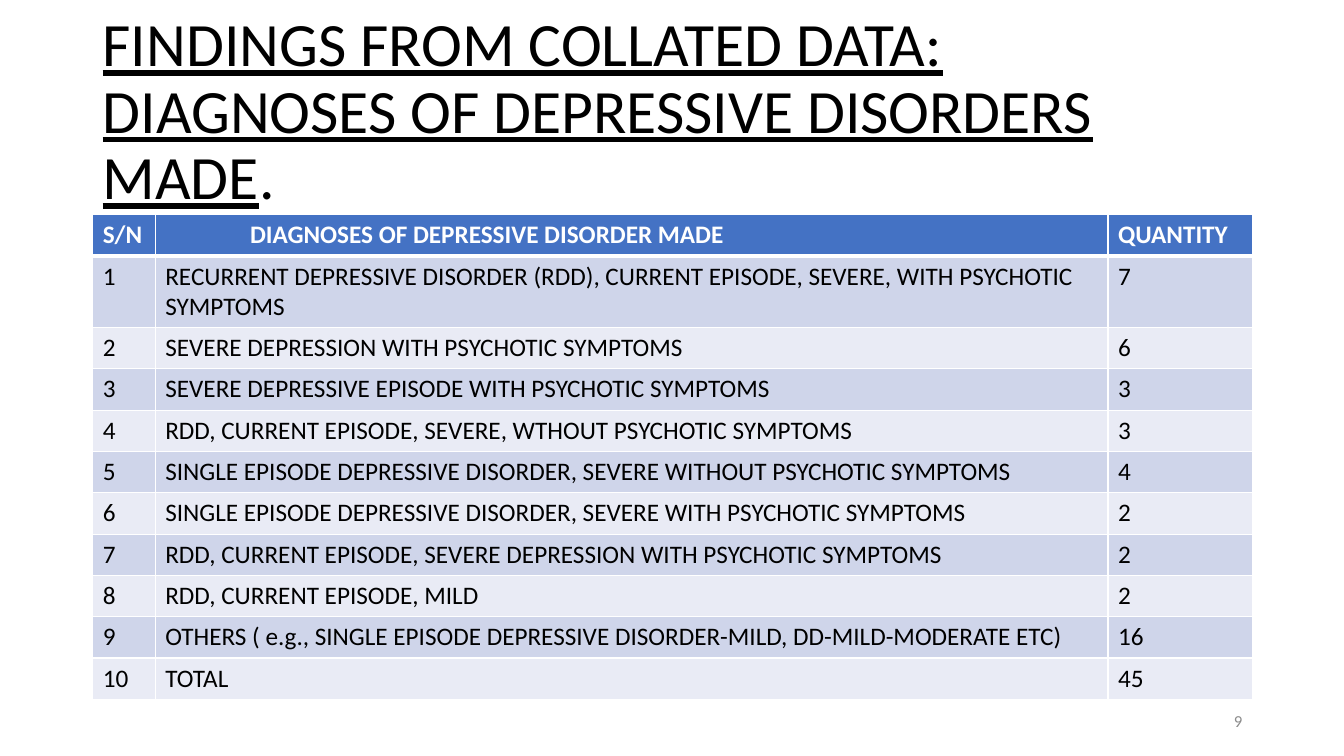
from lxml import etree
from pptx import Presentation, util as u
from pptx.dml.color import RGBColor
from pptx.enum import text
from pptx.oxml import ns

TITLE = [("FINDINGS FROM COLLATED DATA: DIAGNOSES OF DEPRESSIVE DISORDERS MADE", True), (".", False)]
PAGE_NUMBER = "9"
HEADER = ("S/N", "DIAGNOSES OF DEPRESSIVE DISORDER MADE", "QUANTITY")
DIAGNOSES = [
    ("RECURRENT DEPRESSIVE DISORDER (RDD), CURRENT EPISODE, SEVERE, WITH PSYCHOTIC SYMPTOMS", 7),
    ("SEVERE DEPRESSION WITH PSYCHOTIC SYMPTOMS", 6),
    ("SEVERE DEPRESSIVE EPISODE WITH PSYCHOTIC SYMPTOMS", 3),
    ("RDD, CURRENT EPISODE, SEVERE, WTHOUT PSYCHOTIC SYMPTOMS", 3),
    ("SINGLE EPISODE DEPRESSIVE DISORDER, SEVERE WITHOUT PSYCHOTIC SYMPTOMS", 4),
    ("SINGLE EPISODE DEPRESSIVE DISORDER, SEVERE WITH PSYCHOTIC SYMPTOMS", 2),
    ("RDD, CURRENT EPISODE, SEVERE DEPRESSION WITH PSYCHOTIC SYMPTOMS", 2),
    ("RDD, CURRENT EPISODE, MILD", 2),
    ("OTHERS ( e.g., SINGLE EPISODE DEPRESSIVE DISORDER-MILD, DD-MILD-MODERATE ETC)", 16),
    ("TOTAL", 45),
]
COLORS = {"ink": "000000", "white": "FFFFFF", "header": "4472C4",
          "odd": "CFD5EA", "even": "E9EBF5", "number": "8C8C8C"}

WIDTH, HEIGHT = 13.33, 7.5
LEFT, CONTENT = 0.92, 11.5
COLUMNS = (0.62, 9.45, 1.43)
ROW, WRAPPED_ROW = 0.41, 0.71
WRAP_AT = 80
HEADER_INDENT = 0.94


def add_span(para, words, color, **formats):
    span = para.add_run()
    span.text = words
    span.font.color.rgb = RGBColor.from_string(COLORS[color])
    for name, value in {"name": "Calibri", **formats}.items():
        setattr(span.font, name, value)


def add_box(page, left, top, width, height):
    frame = page.shapes.add_textbox(*map(u.Inches, (left, top, width, height))).text_frame
    frame.word_wrap = True
    frame.vertical_anchor = text.MSO_ANCHOR.MIDDLE
    return frame.paragraphs[0]


def add_borders(cell, points):
    properties = cell._tc.get_or_add_tcPr()
    for position, (side, weight) in enumerate(points.items()):
        line = etree.Element(ns.qn(f"a:ln{side}"), w=str(u.Pt(weight)))
        fill = etree.SubElement(line, ns.qn("a:solidFill"))
        etree.SubElement(fill, ns.qn("a:srgbClr"), val=COLORS["white"])
        properties.insert(position, line)


def add_diagnoses(page):
    rows = [HEADER] + [(number, *entry) for number, entry in enumerate(DIAGNOSES, 1)]
    heights = [WRAPPED_ROW if len(row[1]) > WRAP_AT else ROW for row in rows]
    table = page.shapes.add_table(
        len(rows), len(COLUMNS),
        *map(u.Inches, (LEFT, 2.13, CONTENT, sum(heights)))).table
    for column, width in zip(table.columns, COLUMNS):
        column.width = u.Inches(width)
    for index, (values, height) in enumerate(zip(rows, heights)):
        table.rows[index].height = u.Inches(height)
        heading = index == 0
        shade = "header" if heading else ("even", "odd")[index % 2]
        for place, value in enumerate(values):
            cell = table.cell(index, place)
            cell.fill.solid()
            cell.fill.fore_color.rgb = RGBColor.from_string(COLORS[shade])
            add_borders(cell, {"L": 1, "R": 1, "T": 3 if index == 1 else 1, "B": 3 if heading else 1})
            add_span(cell.text_frame.paragraphs[0], str(value),
                     "white" if heading else "ink", size=u.Pt(18), bold=heading)
    table.cell(0, 1).margin_left = u.Inches(HEADER_INDENT)


def main():
    deck = Presentation()
    deck.slide_width, deck.slide_height = u.Inches(WIDTH), u.Inches(HEIGHT)
    page = deck.slides.add_slide(deck.slide_layouts[6])

    title = add_box(page, LEFT, 0.4, CONTENT, 1.45)
    title.line_spacing = 0.9
    for words, underlined in TITLE:
        add_span(title, words, "ink", size=u.Pt(44), underline=underlined)

    add_diagnoses(page)

    number = add_box(page, LEFT + CONTENT - 3, 6.95, 3, 0.4)
    number.alignment = text.PP_ALIGN.RIGHT
    add_span(number, PAGE_NUMBER, "number", size=u.Pt(12))

    deck.save("out.pptx")


if __name__ == "__main__":
    main()
